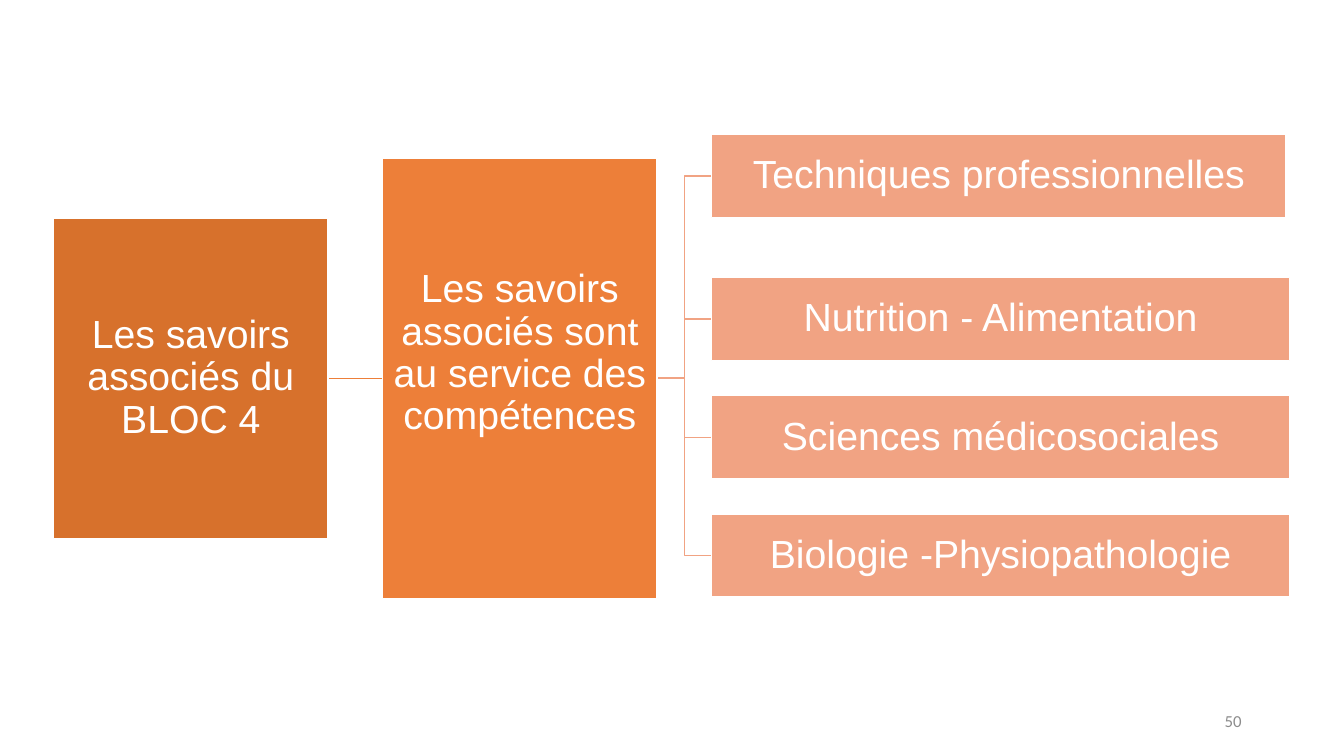
from dataclasses import dataclass

from lxml import etree
from pptx import Presentation
from pptx.dml.color import RGBColor
from pptx.enum.shapes import MSO_CONNECTOR as Link, MSO_SHAPE as Preset
from pptx.enum.text import MSO_ANCHOR as Anchor, PP_ALIGN as Align
from pptx.oxml.ns import qn
from pptx.util import Cm, Pt

WHITE = RGBColor(0xFF, 0xFF, 0xFF)
DARK_ORANGE = RGBColor(0xD7, 0x71, 0x2C)
ORANGE = RGBColor(0xED, 0x7F, 0x39)
SALMON = RGBColor(0xF1, 0xA3, 0x83)
GREY = RGBColor(0x8C, 0x8C, 0x8C)

# Measures in centimetres
LEFT, PITCH = 1.35, 8.29
MIDDLE = 9.53
BOX_WIDTH = 6.92
TOPIC_HEIGHT = 2.1
TOPIC_STEP = 2.98
INSET = 0.05


@dataclass(frozen=True)
class Node:
    text: str
    column: int
    center: float
    width: float
    height: float
    fill: RGBColor
    bottom_inset: float = INSET

    @property
    def left(self) -> float:
        return LEFT + self.column * PITCH

    @property
    def right(self) -> float:
        return self.left + self.width

    @property
    def top(self) -> float:
        return self.center - self.height / 2


def write_text(shape, text: str, *, font: str, size: float, color: RGBColor,
               align: Align, line_spacing: float = 1.0) -> None:
    frame = shape.text_frame
    frame.word_wrap = True
    frame.vertical_anchor = Anchor.MIDDLE
    para = frame.paragraphs[0]
    para.alignment = align
    para.line_spacing = line_spacing
    span = para.add_run()
    span.text = text
    span.font.name = font
    span.font.size = Pt(size)
    span.font.color.rgb = color


def draw_link(page, start: Node, end: Node, color: RGBColor) -> None:
    kind = Link.STRAIGHT if start.center == end.center else Link.ELBOW
    link = page.shapes.add_connector(kind, Cm(start.right), Cm(start.center),
                                     Cm(end.left), Cm(end.center))
    link.line.color.rgb = color
    link.line.width = Pt(1)
    properties = link._element.find(qn("p:spPr"))
    etree.SubElement(properties, qn("a:effectLst"))


def draw_node(page, node: Node) -> None:
    box = page.shapes.add_shape(Preset.RECTANGLE, Cm(node.left), Cm(node.top),
                                Cm(node.width), Cm(node.height))
    box.shadow.inherit = False
    box.fill.solid()
    box.fill.fore_color.rgb = node.fill
    box.line.color.rgb = WHITE
    box.line.width = Pt(1)
    frame = box.text_frame
    frame.margin_left = frame.margin_right = frame.margin_top = Cm(INSET)
    frame.margin_bottom = Cm(node.bottom_inset)
    write_text(box, node.text, font="Arial", size=28, color=WHITE,
               align=Align.CENTER, line_spacing=0.9)


def topic(text: str, center: float, width: float) -> Node:
    return Node(text, 2, center, width, TOPIC_HEIGHT, SALMON)


def main() -> None:
    deck = Presentation()
    deck.slide_width, deck.slide_height = Cm(33.87), Cm(19.05)
    page = deck.slides.add_slide(deck.slide_layouts[6])

    # Tree content
    block = Node("Les savoirs associés du BLOC 4", 0, MIDDLE, BOX_WIDTH, 8.08,
                 DARK_ORANGE)
    service = Node("Les savoirs associés sont au service des compétences", 1,
                   MIDDLE, BOX_WIDTH, 11.1, ORANGE, bottom_inset=1.28)
    subjects = ("Nutrition - Alimentation", "Sciences médicosociales",
                "Biologie -Physiopathologie")
    topics = [topic("Techniques professionnelles", 4.44, 14.48)]
    topics += [topic(text, 8.04 + row * TOPIC_STEP, 14.57)
               for row, text in enumerate(subjects)]

    # Links lie behind the boxes
    for subject in reversed(topics):
        draw_link(page, service, subject, SALMON)
    draw_link(page, block, service, ORANGE)

    # Boxes
    for node in (block, service, *topics):
        draw_node(page, node)

    # Page number
    number = page.shapes.add_textbox(Cm(23.92), Cm(17.66), Cm(7.62), Cm(1.01))
    write_text(number, "50", font="Calibri", size=12, color=GREY,
               align=Align.RIGHT)

    deck.save("out.pptx")


if __name__ == "__main__":
    main()
